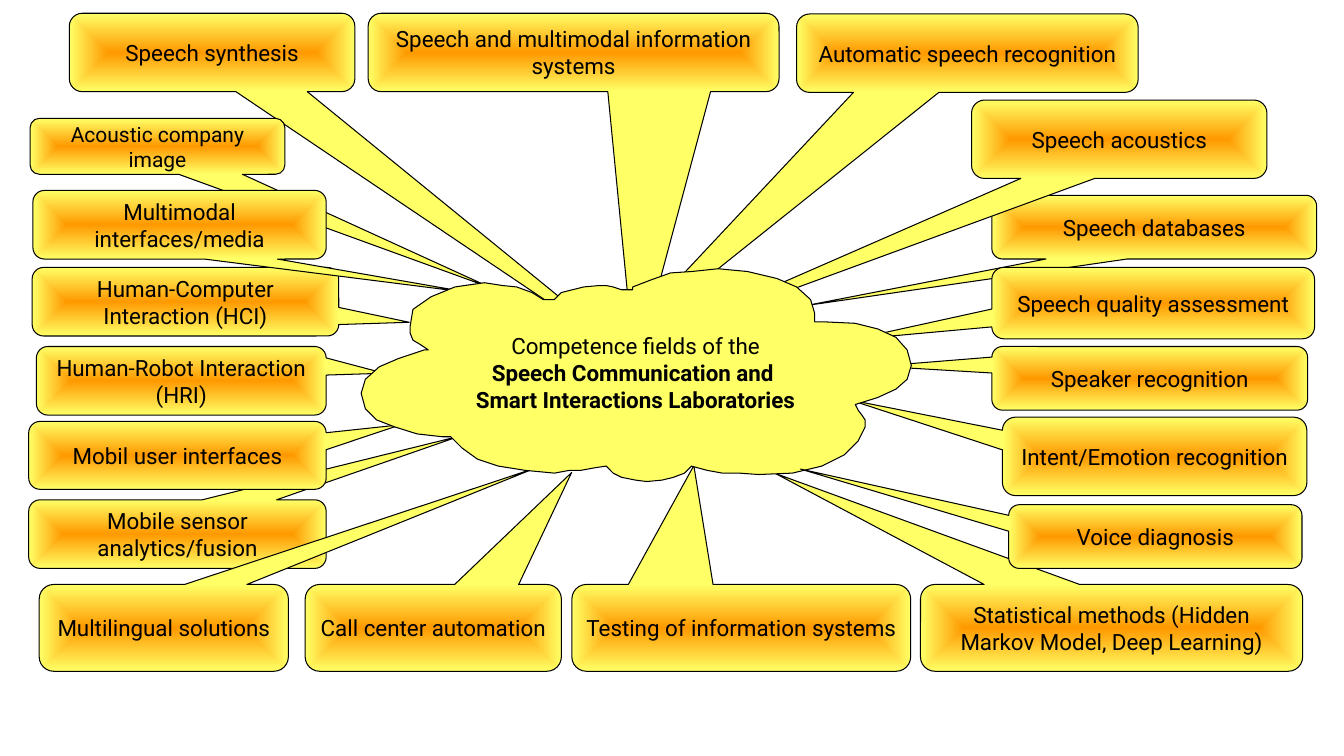
from lxml.etree import SubElement
from pptx import Presentation
from pptx.dml.color import RGBColor
from pptx.enum.shapes import MSO_SHAPE
from pptx.enum.text import MSO_ANCHOR, PP_ALIGN
from pptx.oxml.ns import qn
from pptx.util import Pt

COLORS = {"core": "FF9900", "edge": "FFFF66", "ink": "000000"}
FONT = "Roboto"

# Label, left, top, width, height, and tail tip as a share of the size from the centre
CALLOUTS_BEHIND = [
    ("Human-Computer Interaction (HCI)", 23, 191, 219, 49, 0.73, 0.3),
    ("Human-Robot Interaction (HRI)", 26, 247.5, 207, 49, 0.7, -0.11),
    ("Mobile sensor analytics/fusion", 20.5, 357, 212.5, 49, 0.95, -1.43),
    ("Mobil user interfaces", 20.5, 301, 212.5, 48.5, 0.75, -0.45),
    ("Testing of information systems", 408.5, 417.5, 242, 62, -0.14, -1.87),
    ("Speech synthesis", 49.5, 9.5, 204, 56, 1.53, 4.05),
    ("Intent/Emotion recognition", 716, 298, 217.5, 56, -1, -0.72),
    ("Speaker recognition", 708.5, 247.5, 225.5, 45.5, -0.86, -0.19),
    ("Speech databases", 708.5, 139.5, 232, 45.5, -1.07, 1.23),
    ("Speech acoustics", 694, 71.5, 211, 56, -1.64, 2.65),
    ("Speech quality assessment", 708.5, 191, 230.5, 51, -0.93, 0.51),
    ("Speech and multimodal information systems", 263, 9.5, 293.5, 56, 0.15, 4.08),
    ("Multilingual solutions", 28, 417.5, 178, 62, 1.49, -1.84),
    ("Automatic speech recognition", 569, 10, 244, 56, -1.08, 3.97),
    ("Acoustic company image", 21.5, 84.5, 182, 40, 1.31, 2.53),
    ("Multimodal interfaces/media", 23.5, 136, 209.5, 49, 0.99, 0.99),
    ("Statistical methods (Hidden Markov Model, Deep Learning)",
     657.5, 417.5, 273, 62, -0.88, -1.78),
]
CALLOUTS_IN_FRONT = [
    ("Voice diagnosis", 720.5, 360.5, 209.5, 45.5, -1.21, -1.06),
    ("Call center automation", 218, 417.5, 183, 62, 0.54, -1.79),
]
SMALLER_LABEL = "Acoustic company image"

CLOUD_OUTLINE = [
    (611, 289), (613, 293), (616, 297), (618, 300), (618, 305), (613, 315),
    (603, 325), (587, 333), (566, 338), (542, 339), (528, 338), (516, 338),
    (505, 336), (494, 333), (489, 338), (481, 341), (473, 343), (462, 344),
    (454, 343), (444, 341), (438, 338), (433, 333), (426, 334), (415, 336),
    (407, 336), (396, 338), (375, 336), (356, 333), (341, 328), (330, 320),
    (322, 312), (316, 312), (298, 310), (282, 305), (269, 300), (261, 292),
    (258, 281), (261, 271), (271, 262), (285, 256), (303, 250), (306, 250),
    (300, 246), (295, 243), (293, 238), (293, 233), (295, 221), (308, 212),
    (325, 205), (346, 202), (359, 204), (369, 205), (380, 209), (388, 214),
    (396, 214), (401, 209), (409, 207), (417, 205), (428, 204), (433, 204),
    (438, 205), (444, 207), (452, 207), (452, 205), (465, 200), (479, 195),
    (494, 194), (513, 192), (534, 194), (555, 199), (569, 205), (579, 214),
    (582, 224), (582, 230), (590, 230), (611, 231), (627, 235), (640, 241),
    (648, 250), (651, 261), (648, 271), (640, 278), (627, 284),
]


def style_paragraph(paragraph, size):
    paragraph.alignment = PP_ALIGN.CENTER
    paragraph.font.name = FONT
    paragraph.font.size = Pt(size)
    paragraph.font.color.rgb = RGBColor.from_string(COLORS["ink"])


def add_callout(label, left, top, width, height, tip_x, tip_y):
    """Add a rounded callout with a gradient that runs from its centre to its edges."""
    callout = slide.shapes.add_shape(
        MSO_SHAPE.ROUNDED_RECTANGULAR_CALLOUT, Pt(left), Pt(top), Pt(width), Pt(height))
    callout.shadow.inherit = False
    callout.adjustments[0] = tip_x
    callout.adjustments[1] = tip_y
    callout.line.color.rgb = RGBColor.from_string(COLORS["ink"])
    callout.line.width = Pt(0.75)

    callout.fill.gradient()
    for stop, position, color in zip(callout.fill.gradient_stops, (0, 1), ("core", "edge")):
        stop.position = position
        stop.color.rgb = RGBColor.from_string(COLORS[color])
    gradient = callout._element.spPr.find(qn("a:gradFill"))
    gradient.remove(gradient.find(qn("a:lin")))
    gradient_path = SubElement(gradient, qn("a:path"), {"path": "rect"})
    SubElement(gradient_path, qn("a:fillToRect"), dict.fromkeys("ltrb", "50000"))

    text_frame = callout.text_frame
    text_frame.word_wrap = True
    text_frame.vertical_anchor = MSO_ANCHOR.MIDDLE
    text_frame.text = label
    style_paragraph(text_frame.paragraphs[0], 15 if label == SMALLER_LABEL else 16)


presentation = Presentation()
presentation.slide_width = Pt(960)
presentation.slide_height = Pt(540)
slide = presentation.slides.add_slide(presentation.slide_layouts[6])

for callout_data in CALLOUTS_BEHIND:
    add_callout(*callout_data)

builder = slide.shapes.build_freeform(*CLOUD_OUTLINE[0], scale=Pt(1))
builder.add_line_segments(CLOUD_OUTLINE[1:], close=True)
cloud = builder.convert_to_shape()
cloud.shadow.inherit = False
cloud.fill.solid()
cloud.fill.fore_color.rgb = RGBColor.from_string(COLORS["edge"])
cloud.line.color.rgb = RGBColor.from_string(COLORS["ink"])
cloud.line.width = Pt(0)

title_box = slide.shapes.add_textbox(Pt(281.5), Pt(234), Pt(345), Pt(65.5))
title_box.text_frame.word_wrap = True
title = title_box.text_frame.paragraphs[0]
style_paragraph(title, 16)
title.add_run().text = "Competence fields of the"
for bold_line in ("Speech Communication and ", "Smart Interactions Laboratories"):
    title.add_line_break()
    run = title.add_run()
    run.text = bold_line
    run.font.bold = True

for callout_data in CALLOUTS_IN_FRONT:
    add_callout(*callout_data)

presentation.save("out.pptx")
